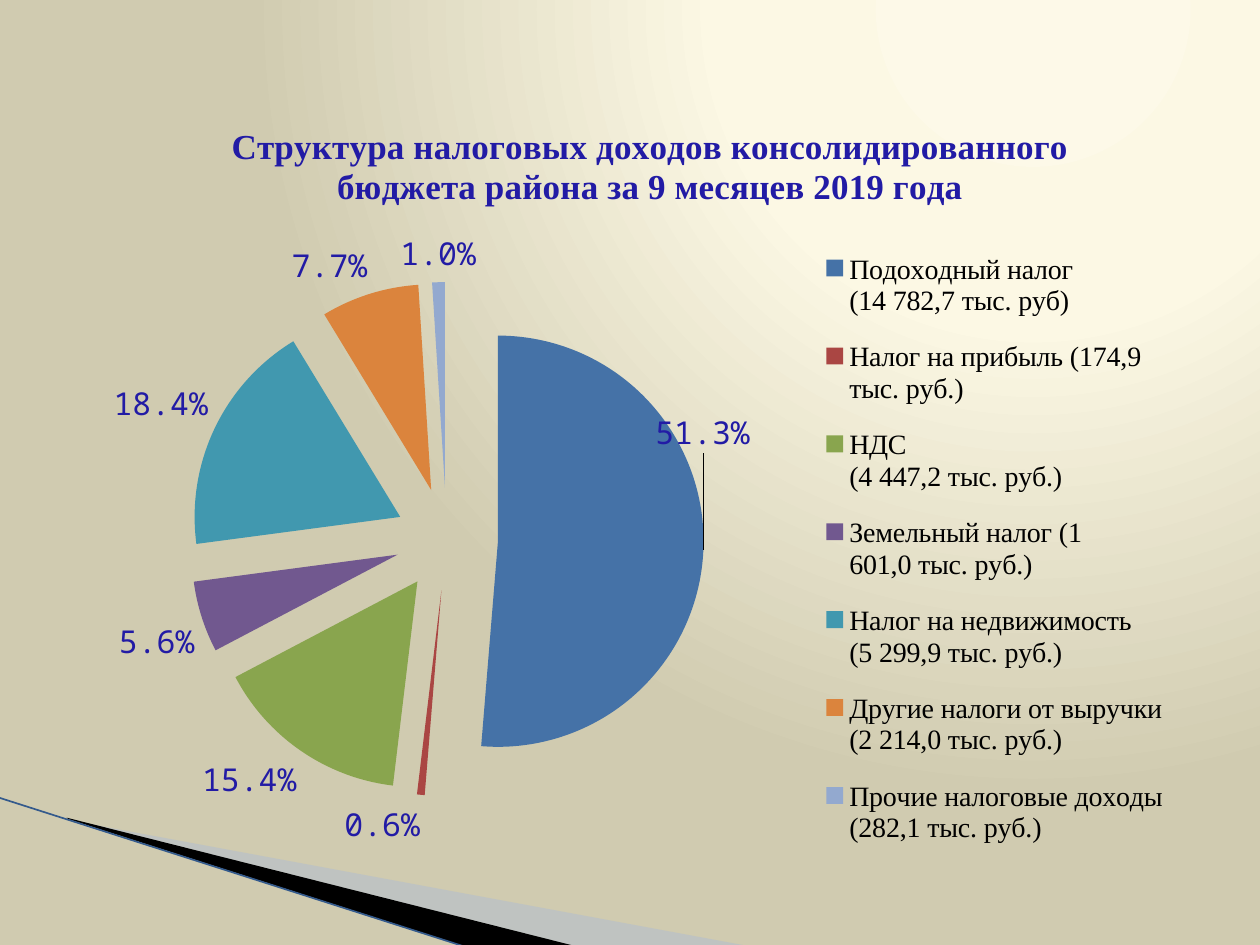
import pptx
import pptx.chart.data
import pptx.dml.color
import pptx.enum.chart
import pptx.enum.shapes
import pptx.oxml
import pptx.oxml.ns
import pptx.util
from pptx.util import Inches, Pt

COLORS = {
    "glow": "FDF9E8", "cream": "FCF8E4", "sand": "D0CBB0",
    "haze": "A7B9DB", "black": "000000", "edge": "345A8C", "ink": "221BA5",
}
TITLE = ("Структура налоговых доходов консолидированного "
         "бюджета района за 9 месяцев 2019 года")
TAXES = [  # legend text, share, slice colour
    ("Подоходный налог\n(14 782,7 тыс. руб)", 0.513, "4572A7"),
    ("Налог на прибыль (174,9\nтыс. руб.)", 0.006, "AA4643"),
    ("НДС\n(4 447,2 тыс. руб.)", 0.154, "89A54E"),
    ("Земельный налог (1\n601,0 тыс. руб.)", 0.056, "71588F"),
    ("Налог на недвижимость\n(5 299,9 тыс. руб.)", 0.184, "4198AF"),
    ("Другие налоги от выручки\n(2 214,0 тыс. руб.)", 0.077, "DB843D"),
    ("Прочие налоговые доходы\n(282,1 тыс. руб.)", 0.01, "93A9CF"),
]
SERIF, MONO = "Times New Roman", "Noto Sans Mono"
SHARE_FORMAT = "0.0%"


def rgb(name):
    return pptx.dml.color.RGBColor.from_string(COLORS.get(name, name))


def xml(tag, content="", attributes=""):
    spaces = pptx.oxml.ns.nsdecls("a", "c", "p")
    return pptx.oxml.parse_xml(f"<{tag} {spaces} {attributes}>{content}</{tag}>")


def set_font(font, name, size, color):
    font.name, font.size = name, Pt(size)
    font.color.rgb = rgb(color)


def place(parent, chart_size, after=None, target=None, **lengths):
    """Give a chart part a manual layout, from lengths in inches."""
    for old in parent.findall(pptx.oxml.ns.qn("c:layout")):
        parent.remove(old)
    width, height = chart_size
    parts = f'<c:layoutTarget val="{target}"/>' if target else ""
    if "w" in lengths:
        parts += '<c:xMode val="edge"/><c:yMode val="edge"/>'
    for key, length in lengths.items():
        share = length / (width if key in "xw" else height)
        parts += f'<c:{key} val="{share:.4f}"/>'
    layout = xml("c:layout", f"<c:manualLayout>{parts}</c:manualLayout>")
    if after:
        parent.find(pptx.oxml.ns.qn(after)).addnext(layout)
    else:
        parent.insert(0, layout)


def paint_background(page):
    stops = "".join(
        f'<a:gs pos="{position}000"><a:srgbClr val="{COLORS[name]}"/></a:gs>'
        for position, name in ((0, "glow"), (40, "cream"), (100, "sand")))
    page.element.cSld.insert(0, xml(
        "p:bg",
        f"<p:bgPr><a:gradFill><a:gsLst>{stops}</a:gsLst>"
        '<a:path path="circle"><a:fillToRect l="65000" t="0" r="0" b="98000"/></a:path>'
        "</a:gradFill><a:effectLst/></p:bgPr>"))


def add_wedge(page, left, top, points, color, alpha=100):
    corners = [(Inches(left + x), Inches(top + y)) for x, y in points]
    builder = page.shapes.build_freeform(*corners[0])
    builder.add_line_segments(corners[1:], close=True)
    wedge = builder.convert_to_shape()
    wedge.shadow.inherit = False
    wedge.fill.solid()
    wedge.fill.fore_color.rgb = rgb(color)
    wedge.line.fill.background()
    if alpha < 100:
        solid = wedge._element.spPr.find(pptx.oxml.ns.qn("a:solidFill"))
        solid[0].append(xml("a:alpha", attributes=f'val="{alpha}000"'))


def add_corner(page, left, top):
    """Swoosh in the lower left corner."""
    add_wedge(page, left, top, [(0.56, 0.18), (5.96, 1.18), (4.57, 1.18), (0.56, 0.17)], "haze", 40)
    add_wedge(page, left, top, [(0.54, 0.16), (4.58, 1.18), (3.73, 1.19), (0.55, 0.17)], "black")
    edge = page.shapes.add_connector(
        pptx.enum.shapes.MSO_CONNECTOR.STRAIGHT,
        Inches(left), Inches(top), Inches(left + 3.72), Inches(top + 1.19))
    edge.line.color.rgb = rgb("edge")
    edge.line.width = Pt(0.95)
    edge._element.spPr.append(xml("a:effectLst"))


def add_labels(series, chart_size):
    labels = series.data_labels
    labels.show_value = True
    labels.number_format, labels.number_format_is_linked = SHARE_FORMAT, False
    moved = series.points[0].data_label
    for item in (labels, moved):
        set_font(item.font, MONO, 18, "ink")
        item.position = pptx.enum.chart.XL_LABEL_POSITION.OUTSIDE_END

    label = labels._element.find(pptx.oxml.ns.qn("c:dLbl"))
    place(label, chart_size, "c:idx", x=-0.44, y=-0.94)
    label.find(pptx.oxml.ns.qn("c:layout")).addnext(
        xml("c:numFmt", attributes=f'formatCode="{SHARE_FORMAT}" sourceLinked="0"'))


def add_tax_pie(page, left, top, width, height):
    data = pptx.chart.data.CategoryChartData(number_format=SHARE_FORMAT)
    data.categories = [name for name, _, _ in TAXES]
    data.add_series("Series 1", [share for _, share, _ in TAXES])
    chart = page.shapes.add_chart(
        pptx.enum.chart.XL_CHART_TYPE.PIE,
        Inches(left), Inches(top), Inches(width), Inches(height), data).chart
    chart_size = (width, height)
    set_font(chart.font, MONO, 18, "black")

    chart.has_title = True
    title = chart.chart_title
    title.text_frame.text = TITLE
    font = title.text_frame.paragraphs[0].font
    set_font(font, SERIF, 20, "ink")
    font.bold = True
    place(title._element, chart_size, "c:tx", x=1.17, y=0.21)

    chart.has_legend = True
    legend = chart.legend
    legend.position = pptx.enum.chart.XL_LEGEND_POSITION.RIGHT
    legend.include_in_layout = False
    set_font(legend.font, SERIF, 16, "black")
    place(legend._element, chart_size, "c:legendPos", x=5.7, y=1.06, w=3.05, h=5.08)

    plot = chart.plots[0]
    plot.vary_by_categories = True
    series = plot.series[0]
    for index, (_, _, color) in enumerate(TAXES):
        fill = series.points[index].format.fill
        fill.solid()
        fill.fore_color.rgb = rgb(color)
    first_point = series._element.find(pptx.oxml.ns.qn("c:dPt"))
    first_point.addprevious(xml("c:explosion", attributes='val="25"'))
    add_labels(series, chart_size)
    place(plot._element.getparent(), chart_size, target="inner", x=0.81, y=1.48, w=4.13, h=4.08)


def main():
    deck = pptx.Presentation()
    deck.slide_width, deck.slide_height = Inches(10), Inches(7.5)
    page = deck.slides.add_slide(deck.slide_layouts[6])
    paint_background(page)
    add_corner(page, -0.01, 6.33)
    add_tax_pie(page, 0.67, 0.76, 8.98, 6.14)
    deck.save("out.pptx")


if __name__ == "__main__":
    main()
